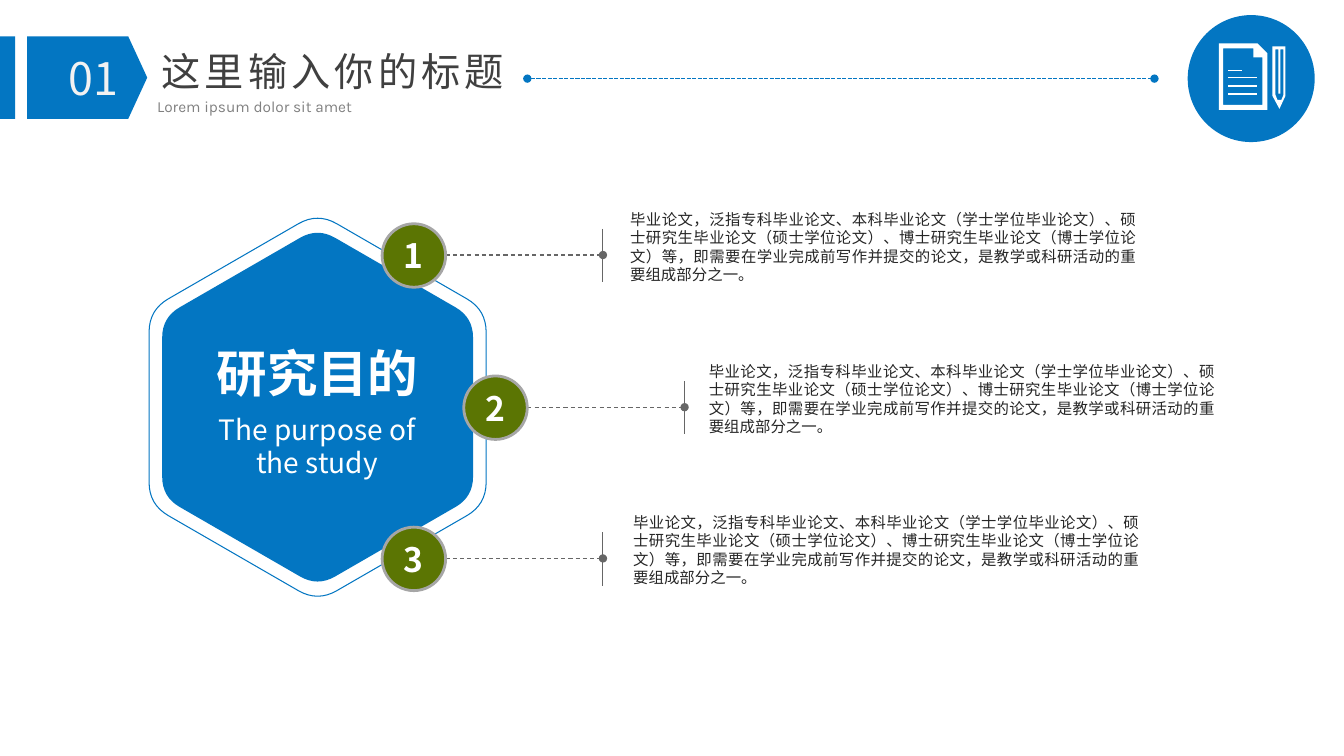
import pptx
import pptx.util
import pptx.oxml
import pptx.oxml.ns
from pptx.dml.color import RGBColor
from pptx.enum.dml import MSO_LINE
from pptx.enum.shapes import MSO_CONNECTOR, MSO_SHAPE
from pptx.enum.text import MSO_ANCHOR, PP_ALIGN

PX = 9144  # 100 px to the inch
BLUE = RGBColor(0x03, 0x76, 0xC2)
GREEN = RGBColor(0x5B, 0x75, 0x03)
WHITE = RGBColor(0xFF, 0xFF, 0xFF)
OFF_WHITE = RGBColor(0xF2, 0xF2, 0xF2)
RING_GRAY = RGBColor(0xA6, 0xA6, 0xA6)
LINE_GRAY = RGBColor(0x66, 0x66, 0x66)
TITLE_GRAY = RGBColor(0x40, 0x40, 0x40)
SUBTITLE_GRAY = RGBColor(0x80, 0x80, 0x80)
BODY_GRAY = RGBColor(0x26, 0x26, 0x26)
CJK_FONT = "Noto Sans CJK SC"
BODY = ("毕业论文，泛指专科毕业论文、本科毕业论文（学士学位毕业论文）、硕士研究生毕业论文"
        "（硕士学位论文）、博士研究生毕业论文（博士学位论文）等，即需要在学业完成前写作并"
        "提交的论文，是教学或科研活动的重要组成部分之一。")

presentation = pptx.Presentation()
presentation.slide_width = 1333 * PX
presentation.slide_height = 750 * PX
slide = presentation.slides.add_slide(presentation.slide_layouts[5])
shapes = slide.shapes


def write(shape, text, size, color, align, font=CJK_FONT, bold=False, margins=(0, 0)):
    """Put one formatted run in a shape; margins are horizontal and vertical px."""
    frame = shape.text_frame
    frame.word_wrap = True
    frame.margin_left = frame.margin_right = margins[0] * PX
    frame.margin_top = frame.margin_bottom = margins[1] * PX
    paragraph = frame.paragraphs[0]
    paragraph.alignment = align
    run = paragraph.add_run()
    run.text = text
    run.font.name = font
    run.font.size = pptx.util.Pt(size)
    run.font.bold = bold
    run.font.color.rgb = color
    east_asian = pptx.oxml.parse_xml(
        f'<a:ea {pptx.oxml.ns.nsdecls("a")} typeface="{CJK_FONT}"/>')
    run.font._element.find(pptx.oxml.ns.qn("a:latin")).addnext(east_asian)
    return run


def add_line(start, end, color, width, dash=None, ends=()):
    """Draw a straight line; ends lists the line-end tags that carry a dot."""
    line = shapes.add_connector(MSO_CONNECTOR.STRAIGHT, *(n * PX for n in start + end))
    line.line.color.rgb = color
    line.line.width = pptx.util.Pt(width)
    if dash:
        line.line.dash_style = dash
    properties = line._element.spPr
    outline = properties.find(pptx.oxml.ns.qn("a:ln"))
    for tag in ends:
        outline.append(pptx.oxml.parse_xml(
            f'<a:{tag} {pptx.oxml.ns.nsdecls("a")} type="oval"/>'))
    properties.append(pptx.oxml.parse_xml(
        f'<a:effectLst {pptx.oxml.ns.nsdecls("a")}/>'))


# Header
title = shapes.title
title.left, title.top, title.width, title.height = (n * PX for n in (146, 42, 368, 57))
title.text_frame.vertical_anchor = MSO_ANCHOR.MIDDLE
title_run = write(title, "这里输入你的标题", 28, TITLE_GRAY, PP_ALIGN.CENTER, "Karla", margins=(10, 5))
title_run.font._element.set("spc", "300")
title.text_frame.word_wrap = False

section_tag = shapes.add_shape(MSO_SHAPE.PENTAGON, 27 * PX, 36 * PX, 119 * PX, 82 * PX)
section_tag.adjustments[0] = 0.23
edge_bar = shapes.add_shape(MSO_SHAPE.RECTANGLE, 0, 36 * PX, 15 * PX, 82 * PX)
icon_disc = shapes.add_shape(MSO_SHAPE.OVAL, 1178 * PX, 15 * PX, 126 * PX, 126 * PX)
for shape in (section_tag, edge_bar, icon_disc):
    shape.shadow.inherit = False
    shape.fill.solid()
    shape.fill.fore_color.rgb = BLUE
    shape.line.fill.background()

section_number = shapes.add_textbox(40 * PX, 45 * PX, 106 * PX, 44 * PX)
write(section_number, "01", 32, OFF_WHITE, PP_ALIGN.CENTER, margins=(10, 5))
subtitle = shapes.add_textbox(146 * PX, 91 * PX, 368 * PX, 29 * PX)
write(subtitle, "Lorem ipsum dolor sit amet", 11, SUBTITLE_GRAY, PP_ALIGN.JUSTIFY, "Karla", margins=(10, 5))
add_line((523, 78), (1145, 78), BLUE, 1, MSO_LINE.SQUARE_DOT, ("headEnd", "tailEnd"))

# Paper and pencil icon: outer outline, then the opening inside it
icon_outlines = [
    [[(1209, 43), (1247, 43), (1257, 53), (1257, 109), (1209, 109)],
     [(1213, 48), (1243, 48), (1243, 57), (1252, 57), (1252, 104), (1213, 104)]],
    [[(1262, 46), (1275, 46), (1275, 95), (1269, 108), (1262, 95)],
     [(1265, 49), (1268, 49), (1268, 93), (1270, 93), (1270, 49), (1273, 49),
      (1273, 94), (1271, 99), (1267, 99), (1265, 94)]],
]
for outer, opening in icon_outlines:
    builder = shapes.build_freeform(*outer[0], scale=PX)
    builder.add_line_segments(outer[1:])
    builder.move_to(*opening[0])
    builder.add_line_segments(opening[1:])
    icon_part = builder.convert_to_shape()
    icon_part.shadow.inherit = False
    icon_part.fill.solid()
    icon_part.fill.fore_color.rgb = WHITE
    icon_part.line.fill.background()
for y, right in ((70, 1232), (77, 1247), (85, 1247), (93, 1247)):
    add_line((1218, y), (right, y), WHITE, 1.25)

# Hexagons with rounded corners
CENTER_X, CENTER_Y = 315, 404
STEPS = 8
for radius, cut, filled in ((178, 20, True), (193, 22, False)):
    half_width = radius * 0.866
    corners = [(0, -radius), (half_width, -radius / 2), (half_width, radius / 2),
               (0, radius), (-half_width, radius / 2), (-half_width, -radius / 2)]
    points = []
    for i, (x, y) in enumerate(corners):
        before, after = corners[i - 1], corners[(i + 1) % 6]
        share = cut / radius
        for step in range(STEPS + 1):
            t = step / STEPS
            pull_before, pull_after = share * (1 - t) ** 2, share * t ** 2
            points.append((
                CENTER_X + x + pull_before * (before[0] - x) + pull_after * (after[0] - x),
                CENTER_Y + y + pull_before * (before[1] - y) + pull_after * (after[1] - y)))
    points = [(round(x * PX), round(y * PX)) for x, y in points]
    builder = shapes.build_freeform(*points[0])
    builder.add_line_segments(points[1:])
    hexagon = builder.convert_to_shape()
    hexagon.shadow.inherit = False
    if filled:
        hexagon.fill.solid()
        hexagon.fill.fore_color.rgb = BLUE
        hexagon.line.fill.background()
    else:
        hexagon.fill.background()
        hexagon.line.color.rgb = BLUE
        hexagon.line.width = pptx.util.Pt(0.75)

heading = shapes.add_textbox(182 * PX, 339 * PX, 266 * PX, 61 * PX)
write(heading, "研究目的", 36, WHITE, PP_ALIGN.CENTER, bold=True)
translation = shapes.add_textbox(213 * PX, 409 * PX, 203 * PX, 67 * PX)
write(translation, "The purpose of the study", 20, WHITE, PP_ALIGN.CENTER)

# Numbered points
DISC = 63
for number, (left, top, text_left) in enumerate(
        ((379, 222, 625), (460, 373, 703), (379, 523, 628)), start=1):
    middle = top + DISC // 2
    line_end = left + DISC + 156
    add_line((left + DISC, middle), (line_end, middle), LINE_GRAY, 0.75, MSO_LINE.DASH, ("tailEnd",))
    add_line((line_end, middle - 26), (line_end, middle + 27), LINE_GRAY, 0.75)
    disc = shapes.add_shape(MSO_SHAPE.OVAL, left * PX, top * PX, DISC * PX, DISC * PX)
    disc.shadow.inherit = False
    disc.fill.solid()
    disc.fill.fore_color.rgb = GREEN
    disc.line.color.rgb = RING_GRAY
    disc.line.width = pptx.util.Pt(2)
    disc.text_frame.vertical_anchor = MSO_ANCHOR.MIDDLE
    write(disc, str(number), 24, WHITE, PP_ALIGN.CENTER, bold=True)
    description = shapes.add_textbox(text_left * PX, (top - 14) * PX, 502 * PX, 74 * PX)
    write(description, BODY, 11, BODY_GRAY, PP_ALIGN.JUSTIFY)

presentation.save("out.pptx")
